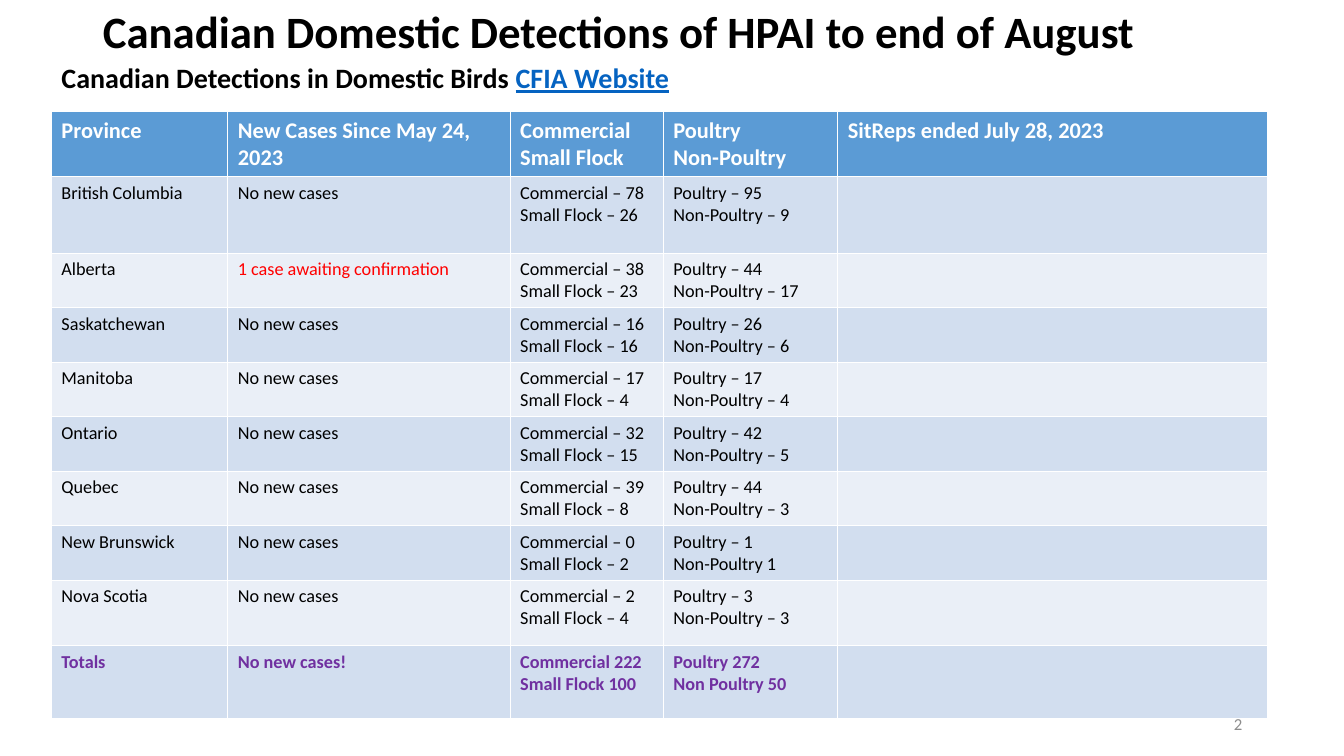
from lxml.etree import SubElement
from pptx import Presentation
from pptx.dml.color import RGBColor
from pptx.enum.text import MSO_ANCHOR, MSO_AUTO_SIZE, PP_ALIGN
from pptx.oxml.ns import qn
from pptx.util import Inches, Pt

BLACK = RGBColor(0x00, 0x00, 0x00)
WHITE = RGBColor(0xFF, 0xFF, 0xFF)
GREY = RGBColor(0x8C, 0x8C, 0x8C)
RED = RGBColor(0xFF, 0x00, 0x00)
PURPLE = RGBColor(0x70, 0x30, 0xA0)
LINK_BLUE = RGBColor(0x05, 0x63, 0xC1)
HEADER_BLUE = RGBColor(0x5B, 0x9B, 0xD5)
BANDS = [RGBColor(0xEA, 0xEF, 0xF7), RGBColor(0xD2, 0xDE, 0xEF)]


def style_font(font, color, **values):
    font.color.rgb = color
    for name, value in {"name": "Calibri", **values}.items():
        setattr(font, name, value)


def set_frame(box, bounds, anchor):
    box.left, box.top, box.width, box.height = map(Inches, bounds)
    settings = {"word_wrap": True, "auto_size": MSO_AUTO_SIZE.NONE, "vertical_anchor": anchor}
    for name, value in settings.items():
        setattr(box.text_frame, name, value)
    return box.text_frame.paragraphs[0]


deck = Presentation()
deck.slide_width, deck.slide_height = Inches(13.33), Inches(7.5)
page = deck.slides.add_slide(deck.slide_layouts[1])

para = set_frame(page.shapes.title, (0.92, -0.04, 11.5, 0.76), MSO_ANCHOR.MIDDLE)
para.text = "Canadian Domestic Detections of HPAI to end of August"
para.alignment = PP_ALIGN.LEFT
para.line_spacing = 0.9
style_font(para.runs[0].font, BLACK, size=Pt(32), bold=True)

para = set_frame(page.placeholders[1], (0.51, 0.45, 12.51, 0.54), MSO_ANCHOR.BOTTOM)
properties = para._p.get_or_add_pPr()
properties.set("marL", "0")
properties.set("indent", "0")
SubElement(properties, qn("a:buNone"))
para.line_spacing = 0.9
para.space_before = Pt(0)
for text, color, underline in [
    ("Canadian Detections in Domestic Birds ", BLACK, False),
    ("CFIA Website", LINK_BLUE, True),
]:
    span = para.add_run()
    span.text = text
    style_font(span.font, color, size=Pt(20), bold=True, underline=underline)

rows = [
    ("Province", "New Cases Since May 24, 2023", "Commercial\nSmall Flock",
     "Poultry\nNon-Poultry", "SitReps ended July 28, 2023"),
    ("British Columbia", "No new cases", "Commercial – 78\nSmall Flock – 26",
     "Poultry – 95\nNon-Poultry – 9", ""),
    ("Alberta", "1 case awaiting confirmation", "Commercial – 38\nSmall Flock – 23",
     "Poultry – 44\nNon-Poultry – 17", ""),
    ("Saskatchewan", "No new cases", "Commercial – 16\nSmall Flock – 16",
     "Poultry – 26\nNon-Poultry – 6", ""),
    ("Manitoba", "No new cases", "Commercial – 17\nSmall Flock – 4",
     "Poultry – 17\nNon-Poultry – 4", ""),
    ("Ontario", "No new cases", "Commercial – 32\nSmall Flock – 15",
     "Poultry – 42\nNon-Poultry – 5", ""),
    ("Quebec", "No new cases", "Commercial – 39\nSmall Flock – 8",
     "Poultry – 44\nNon-Poultry – 3", ""),
    ("New Brunswick", "No new cases", "Commercial – 0\nSmall Flock – 2",
     "Poultry – 1\nNon-Poultry 1", ""),
    ("Nova Scotia", "No new cases", "Commercial – 2\nSmall Flock – 4",
     "Poultry – 3\nNon-Poultry – 3", ""),
    ("Totals", "No new cases!", "Commercial 222\nSmall Flock 100",
     "Poultry 272\nNon Poultry 50", ""),
]
widths = [1.75, 2.8, 1.52, 1.73, 4.26]
heights = [0.64, 0.76] + [0.54] * 6 + [0.65, 0.72]
table = page.shapes.add_table(
    len(rows), len(widths), Inches(0.51), Inches(1.11),
    Inches(sum(widths)), Inches(sum(heights)),
).table
for column, width in zip(table.columns, widths):
    column.width = Inches(width)

for r, (texts, height) in enumerate(zip(rows, heights)):
    table.rows[r].height = Inches(height)
    is_header, is_total = r == 0, r == len(rows) - 1
    for c, text in enumerate(texts):
        cell = table.cell(r, c)
        cell.text = text
        cell.fill.solid()
        cell.fill.fore_color.rgb = HEADER_BLUE if is_header else BANDS[r % 2]
        color = WHITE if is_header else PURPLE if is_total else BLACK
        if "awaiting" in text:
            color = RED
        for para in cell.text_frame.paragraphs:
            for target in [para, *para.runs]:
                style_font(target.font, color, size=Pt(16 if is_header else 13),
                           bold=is_header or is_total)

number_box = page.shapes.add_textbox(0, 0, 0, 0)
para = set_frame(number_box, (9.42, 6.98, 3, 0.4), MSO_ANCHOR.MIDDLE)
para.alignment = PP_ALIGN.RIGHT
span = para.add_run()
span.text = "2"
style_font(span.font, GREY, size=Pt(12))

deck.save("out.pptx")
